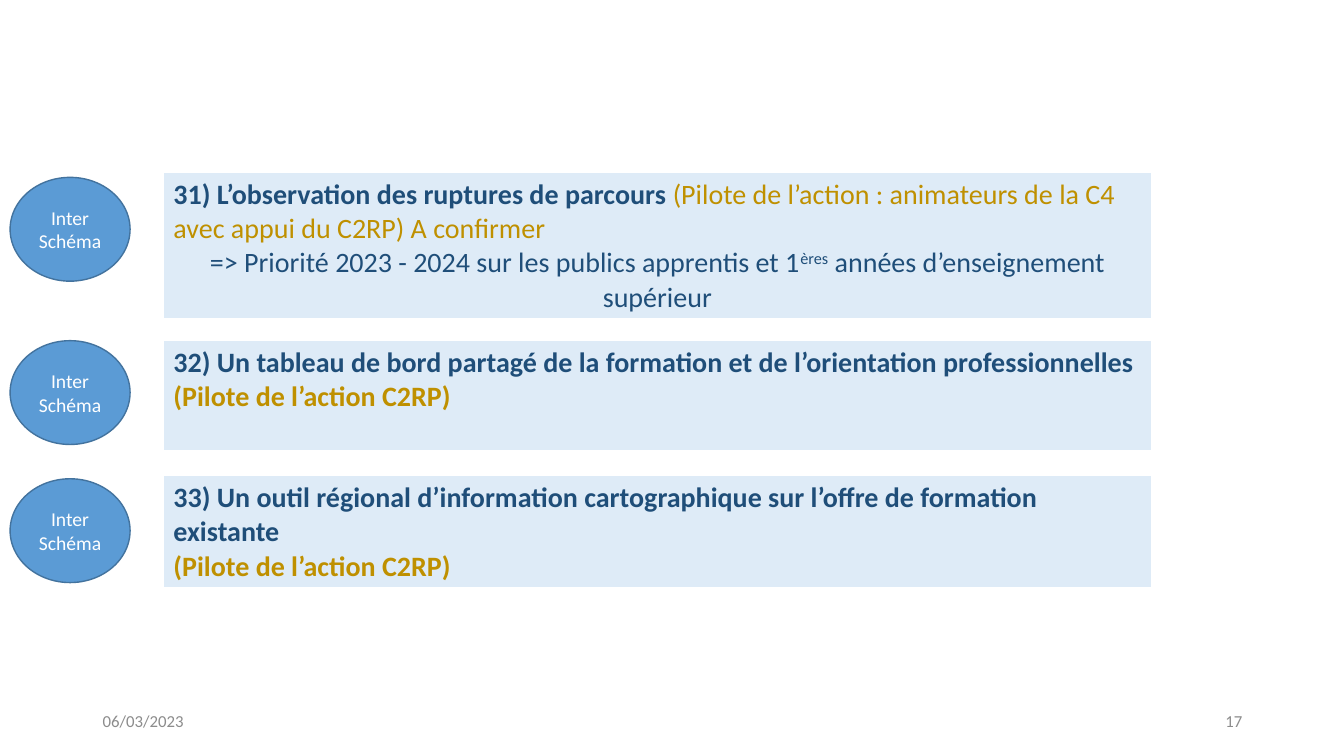
from lxml import etree
from pptx import Presentation
from pptx.dml.color import RGBColor
from pptx.enum.shapes import MSO_SHAPE
from pptx.enum.text import MSO_ANCHOR, PP_ALIGN
from pptx.oxml.ns import qn
from pptx.util import Inches, Pt

LEFT, CENTER, RIGHT = PP_ALIGN.LEFT, PP_ALIGN.CENTER, PP_ALIGN.RIGHT
TOP, MIDDLE = MSO_ANCHOR.TOP, MSO_ANCHOR.MIDDLE
FONT = "Calibri"
COLORS = {"navy": "1F4E79", "gold": "BF9000", "pale": "DEEBF7", "blue": "5B9BD5",
          "outline": "43739E", "grey": "8C8C8C", "white": "FFFFFF"}

# A run is (text, colour, bold, baseline shift in %); a paragraph is (alignment, runs).
PILOT = (LEFT, [("(Pilote de l’action C2RP)", "gold", True, 0)])
BADGE = [(CENTER, [(word, "white", False, 0)]) for word in ("Inter", "Schéma")]
# Each action: table top, table height, badge top, anchor, paragraphs
ACTIONS = [
    (1.71, 1.43, 1.76, MIDDLE, [
        (LEFT, [("31) L’observation des ruptures de parcours ", "navy", True, 0),
                ("(Pilote de l’action : animateurs de la C4 avec appui du C2RP) A confirmer",
                 "gold", False, 0)]),
        (CENTER, [("=> Priorité 2023 - 2024 sur les publics apprentis et 1", "navy", False, 0),
                  ("ères", "navy", False, 30),
                  (" années d’enseignement supérieur", "navy", False, 0)])]),
    (3.38, 1.1, 3.38, TOP, [
        (LEFT, [("32) Un tableau de bord partagé de la formation et de l’orientation "
                 "professionnelles", "navy", True, 0)]),
        PILOT]),
    (4.72, 1.1, 4.75, MIDDLE, [
        (LEFT, [("33) Un outil régional d’information cartographique sur l’offre de formation "
                 "existante", "navy", True, 0)]),
        PILOT]),
]
FOOTER = [(0.92, LEFT, "06/03/2023"), (9.42, RIGHT, "17")]

TABLE_LEFT, TABLE_WIDTH = 1.62, 9.8
BADGE_LEFT, BADGE_WIDTH, BADGE_HEIGHT = 0.1, 1.19, 1.03
FOOTER_TOP, FOOTER_WIDTH, FOOTER_HEIGHT = 6.95, 3, 0.4
BORDERS = [("a:lnL", 1), ("a:lnR", 1), ("a:lnT", 1), ("a:lnB", 3)]


def rgb(name):
    return RGBColor.from_string(COLORS[name])


def box(*lengths):
    return [Inches(v) for v in lengths]


def write(tf, paragraphs, size):
    tf.word_wrap = True
    for i, (align, runs) in enumerate(paragraphs):
        p = tf.add_paragraph() if i else tf.paragraphs[0]
        p.alignment = align
        for text, color, bold, shift in runs:
            r = p.add_run()
            r.text = text
            r.font.name, r.font.size, r.font.bold = FONT, Pt(size), bold
            r.font.color.rgb = rgb(color)
            if shift:
                r.font._element.set("baseline", str(shift * 1000))


def add_borders(cell):
    """Draw white cell edges; they must precede the fill in the cell properties."""
    tcPr = cell._tc.get_or_add_tcPr()
    for i, (tag, width) in enumerate(BORDERS):
        ln = etree.Element(qn(tag), w=str(Pt(width)))
        fill = etree.SubElement(ln, qn("a:solidFill"))
        etree.SubElement(fill, qn("a:srgbClr"), val=COLORS["white"])
        tcPr.insert(i, ln)


def add_action(s, top, height, anchor, paragraphs):
    table = s.shapes.add_table(1, 1, *box(TABLE_LEFT, top, TABLE_WIDTH, height)).table
    cell = table.cell(0, 0)
    cell.fill.solid()
    cell.fill.fore_color.rgb = rgb("pale")
    cell.vertical_anchor = anchor
    add_borders(cell)
    write(cell.text_frame, paragraphs, 20)


def add_badge(s, top):
    sp = s.shapes.add_shape(MSO_SHAPE.OVAL, *box(BADGE_LEFT, top, BADGE_WIDTH, BADGE_HEIGHT))
    sp.shadow.inherit = False
    sp.fill.solid()
    sp.fill.fore_color.rgb = rgb("blue")
    sp.line.color.rgb = rgb("outline")
    sp.line.width = Pt(1)
    sp.text_frame.vertical_anchor = MIDDLE
    write(sp.text_frame, BADGE, 14)


def main():
    prs = Presentation()
    prs.slide_width, prs.slide_height = box(13.33, 7.5)
    s = prs.slides.add_slide(prs.slide_layouts[6])
    for top, height, badge_top, anchor, paragraphs in ACTIONS:
        add_action(s, top, height, anchor, paragraphs)
        add_badge(s, badge_top)
    for left, align, text in FOOTER:
        tf = s.shapes.add_textbox(*box(left, FOOTER_TOP, FOOTER_WIDTH, FOOTER_HEIGHT)).text_frame
        tf.vertical_anchor = MIDDLE
        write(tf, [(align, [(text, "grey", False, 0)])], 12)
    prs.save("out.pptx")


if __name__ == "__main__":
    main()
